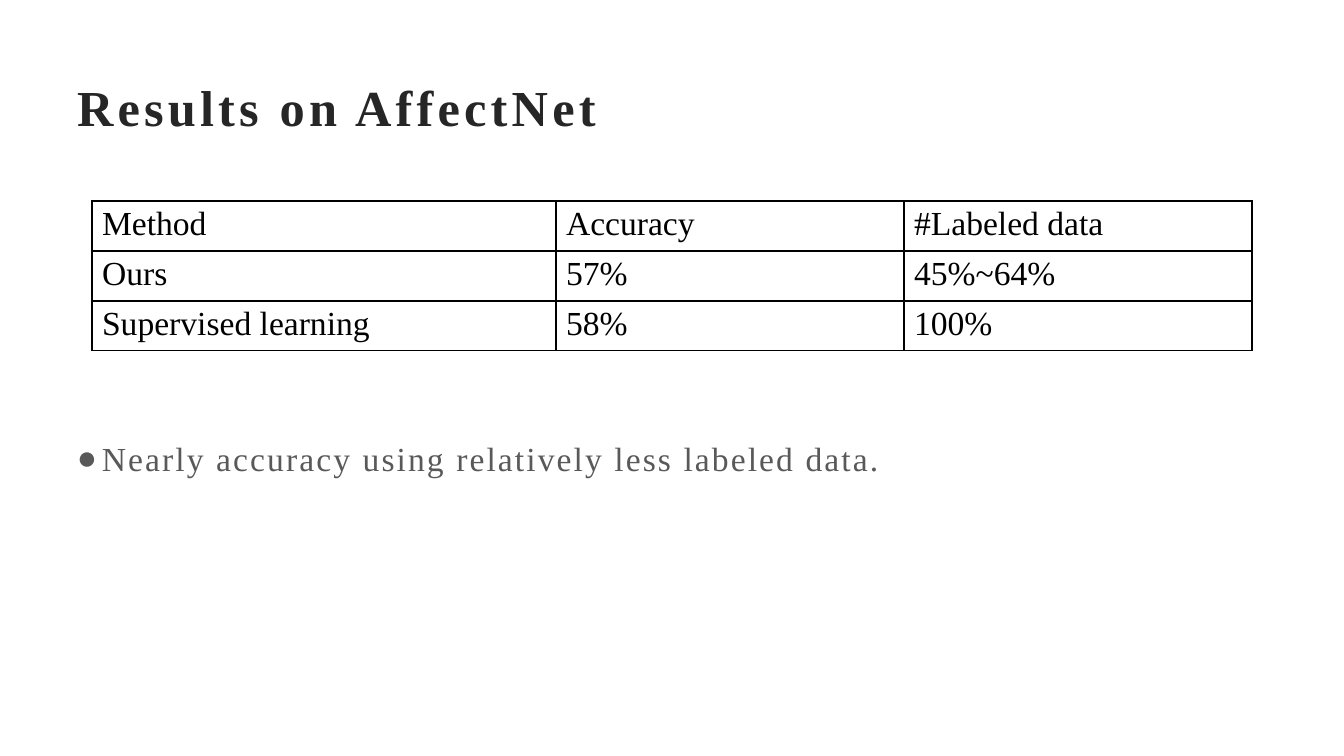
from pptx import Presentation
from pptx.dml.color import RGBColor
from pptx.enum.text import MSO_ANCHOR as Anchor, MSO_AUTO_SIZE as AutoSize, PP_ALIGN as Align
from pptx.oxml.ns import qn
from pptx.util import Emu, Pt
from lxml.etree import SubElement

FONT = "Times New Roman"
RESULTS = [
    ("Method", "Accuracy", "#Labeled data"),
    ("Ours", "57%", "45%~64%"),
    ("Supervised learning", "58%", "100%"),
]


def px(length):
    return Emu(round(length * 914400 / 100.8))


def color(value):
    return RGBColor.from_string(value)


def write(frame, text, size=24, fill="000000", bold=False, spacing=0):
    """Put one formatted line into a text frame; spacing is in points."""
    paragraph = frame.paragraphs[0]
    paragraph.alignment = Align.LEFT
    run = paragraph.add_run()
    run.text = text
    run.font.name = FONT
    run.font.size = Pt(size)
    run.font.bold = bold
    run.font.color.rgb = color(fill)
    if spacing:
        run._r.get_or_add_rPr().set("spc", str(round(spacing * 100)))
    return paragraph


def add_title(slide, left, top, width, height):
    title = slide.shapes.title
    title.left, title.top, title.width, title.height = map(px, (left, top, width, height))
    frame = title.text_frame
    frame.auto_size = AutoSize.NONE
    frame.vertical_anchor = Anchor.MIDDLE
    write(frame, "Results on AffectNet", size=36, fill="262626", bold=True, spacing=3)


def border_cell(cell):
    properties = cell._tc.get_or_add_tcPr()
    for side in ("a:lnL", "a:lnR", "a:lnT", "a:lnB"):
        line = SubElement(properties, qn(side), w=str(Pt(1)))
        fill = SubElement(line, qn("a:solidFill"))
        SubElement(fill, qn("a:srgbClr"), val="000000")


def add_results(slide, left, top, width, height):
    rows, columns = len(RESULTS), len(RESULTS[0])
    table = slide.shapes.add_table(rows, columns, *map(px, (left, top, width, height))).table
    table.first_row = table.horz_banding = False
    # The method column takes 40 %, the two figures share the rest
    for column, percent in zip(table.columns, (40, 30, 30)):
        column.width = px(width * percent / 100)
    for row, texts in zip(table.rows, RESULTS):
        row.height = px(height / rows)
        for cell, text in zip(row.cells, texts):
            border_cell(cell)
            cell.fill.solid()
            cell.fill.fore_color.rgb = color("FFFFFF")
            write(cell.text_frame, text)


def add_conclusion(slide, left, top, width, height):
    frame = slide.shapes.add_textbox(*map(px, (left, top, width, height))).text_frame
    frame.word_wrap = True
    paragraph = write(frame, "Nearly accuracy using relatively less labeled data.",
                      fill="595959", spacing=1.5)
    # Hanging bullet
    properties = paragraph._p.get_or_add_pPr()
    properties.set("marL", str(px(25)))
    properties.set("indent", str(-px(25)))
    SubElement(properties, qn("a:buFont"), typeface="Arial")
    SubElement(properties, qn("a:buChar"), char="●")


def main():
    deck = Presentation()
    deck.slide_width, deck.slide_height = px(1344), px(756)
    slide = deck.slides.add_slide(deck.slide_layouts[5])
    add_title(slide, 67, 67, 1210, 78)
    add_results(slide, 92, 201, 1160, 150)
    add_conclusion(slide, 67, 433, 1210, 50)
    deck.save("out.pptx")


if __name__ == "__main__":
    main()
